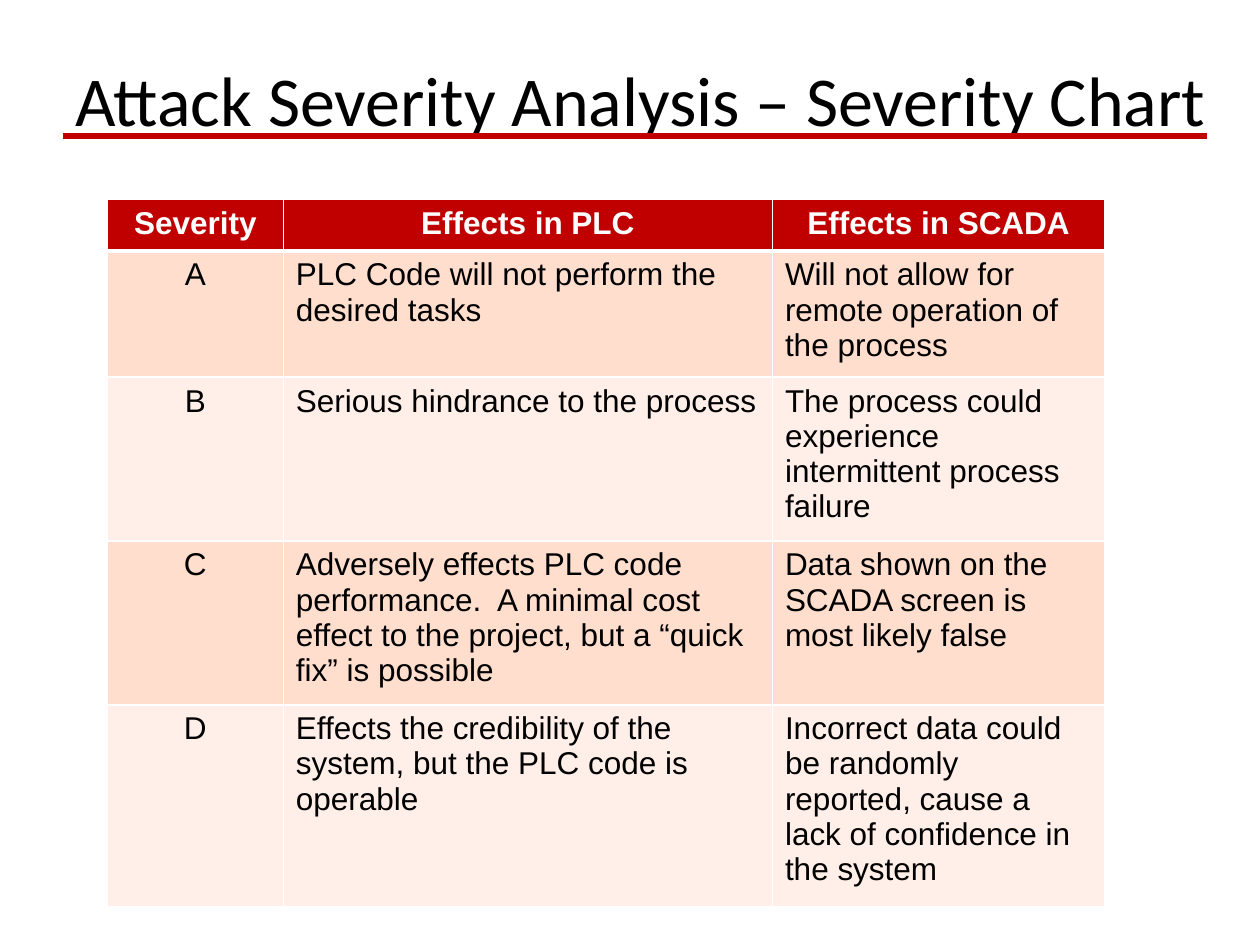
"""Build the attack severity chart slide."""
from lxml import etree
from pptx import Presentation
from pptx import util as u
from pptx.dml.color import RGBColor
from pptx.enum import shapes, text
from pptx.oxml.ns import qn

TITLE = "Attack Severity Analysis – Severity Chart"
ROWS = [
    ("Severity", "Effects in PLC", "Effects in SCADA"),
    ("A", "PLC Code will not perform the desired tasks",
     "Will not allow for remote operation of the process"),
    ("B", "Serious hindrance to the process",
     "The process could experience intermittent process failure"),
    ("C", "Adversely effects PLC code performance.  A minimal cost effect to the project, "
          "but a “quick fix” is possible",
     "Data shown on the SCADA screen is most likely false"),
    ("D", "Effects the credibility of the system, but the PLC code is operable",
     "Incorrect data could be randomly reported, cause a lack of confidence in the system"),
]
COLORS = {"red": "C00000", "dark_band": "FFDECE", "light_band": "FFEFE8",
          "white": "FFFFFF", "black": "000000"}
COLUMN_WIDTHS = [100.5, 279.5, 190]
ROW_HEIGHTS = [29.5, 72, 93.6, 93.6, 115.2]
TITLE_FONT = {"name": "Calibri", "size": u.Pt(40), "bold": False}
HEADER_FONT = {"name": "Arial", "size": u.Pt(18), "bold": True}
BODY_FONT = {**HEADER_FONT, "bold": False}


def rgb(name):
    return RGBColor.from_string(COLORS[name])


def write(paragraph, words, font, color):
    run = paragraph.add_run()
    run.text = words
    for key, value in font.items():
        setattr(run.font, key, value)
    run.font.color.rgb = rgb(color)


def add_borders(cell, bottom_width):
    properties = cell._tc.get_or_add_tcPr()
    for side, width in (("L", 1), ("R", 1), ("T", 1), ("B", bottom_width)):
        line = etree.SubElement(properties, qn(f"a:ln{side}"), w=str(u.Pt(width)))
        fill = etree.SubElement(line, qn("a:solidFill"))
        etree.SubElement(fill, qn("a:srgbClr"), val=COLORS["white"])


def add_title(slide):
    box = slide.shapes.add_textbox(u.Pt(36), u.Pt(41.8), u.Pt(667.4), u.Pt(41))
    box.text_frame.word_wrap = True
    paragraph = box.text_frame.paragraphs[0]
    paragraph.line_spacing = 0.7
    write(paragraph, TITLE, TITLE_FONT, "black")

    rule = slide.shapes.add_connector(
        shapes.MSO_CONNECTOR.STRAIGHT, u.Pt(36), u.Pt(77.8), u.Pt(689.8), u.Pt(77.8))
    rule.line.color.rgb = rgb("red")
    rule.line.width = u.Pt(3)
    etree.SubElement(rule._element.spPr, qn("a:effectLst"))


def add_severity_table(slide):
    table = slide.shapes.add_table(
        len(ROWS), len(COLUMN_WIDTHS), u.Pt(61.4), u.Pt(114),
        u.Pt(sum(COLUMN_WIDTHS)), u.Pt(sum(ROW_HEIGHTS))).table
    for column, width in zip(table.columns, COLUMN_WIDTHS):
        column.width = u.Pt(width)
    for row, height in zip(table.rows, ROW_HEIGHTS):
        row.height = u.Pt(height)
    for i, row in enumerate(ROWS):
        header = i == 0
        band = "red" if header else "dark_band" if i % 2 else "light_band"
        for j, words in enumerate(row):
            cell = table.cell(i, j)
            add_borders(cell, 3 if header else 1)
            cell.fill.solid()
            cell.fill.fore_color.rgb = rgb(band)
            paragraph = cell.text_frame.paragraphs[0]
            centred = header or j == 0
            paragraph.alignment = text.PP_ALIGN.CENTER if centred else text.PP_ALIGN.LEFT
            write(paragraph, words, HEADER_FONT if header else BODY_FONT,
                  "white" if header else "black")


def main():
    presentation = Presentation()
    presentation.slide_width, presentation.slide_height = u.Pt(720), u.Pt(540)
    slide = presentation.slides.add_slide(presentation.slide_layouts[6])
    add_title(slide)
    add_severity_table(slide)
    presentation.save("out.pptx")


if __name__ == "__main__":
    main()
